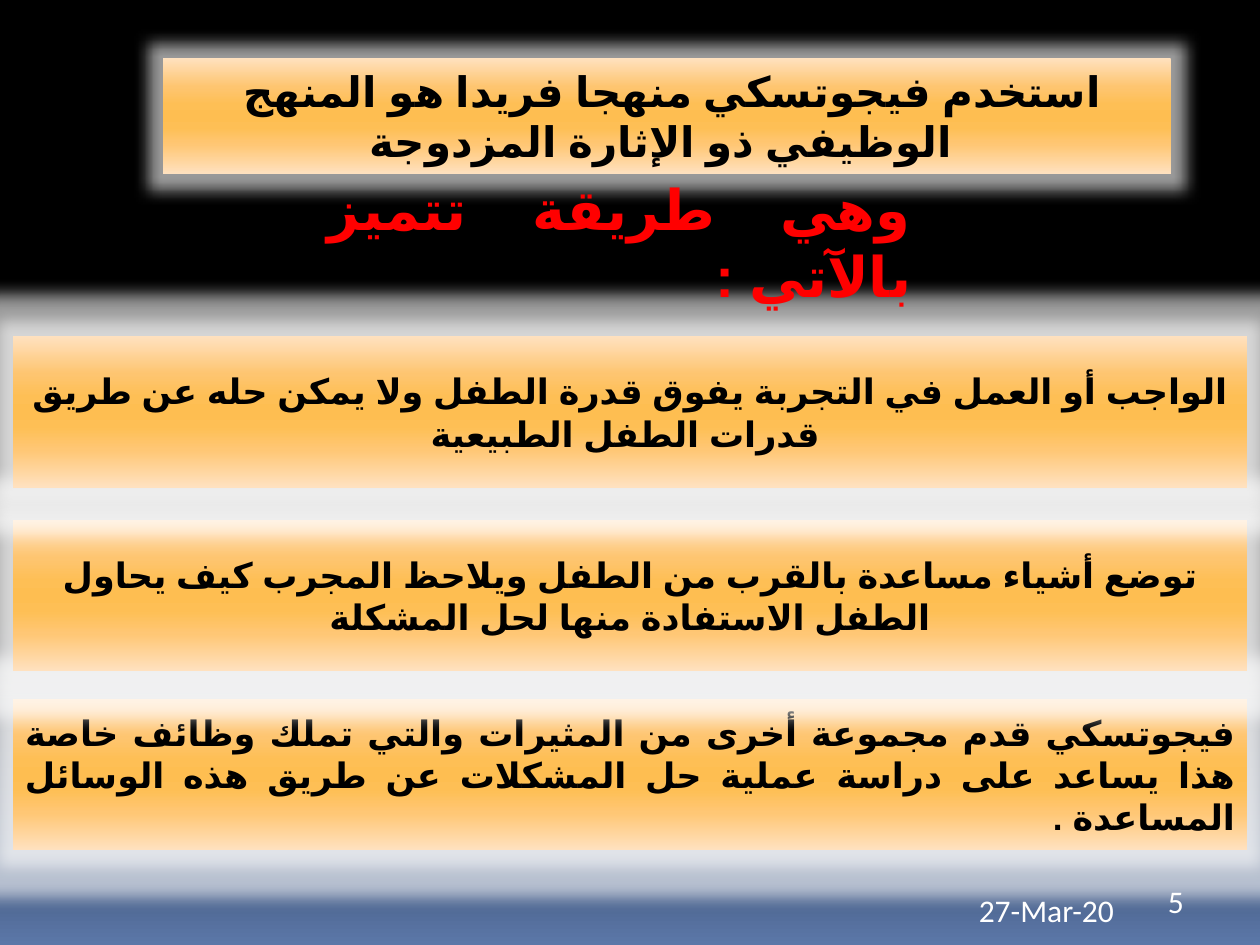
"""Build the slide on the double stimulation method and its three features."""
import pptx
import pptx.dml.color
import pptx.enum.lang
import pptx.enum.shapes
import pptx.enum.text
import pptx.oxml
import pptx.oxml.ns
import pptx.util
from pptx.util import Inches

ALIGN = pptx.enum.text.PP_ALIGN
ANCHOR = pptx.enum.text.MSO_ANCHOR
LANGUAGE = pptx.enum.lang.MSO_LANGUAGE_ID
THEME = {
    "background": [(0, "000000"), (65, "000000"), (100, "5B77A8")],
    "panel": [(0, "FFE1BF"), (25, "FEC570"), (40, "FEBF55"), (50, "FEBE51"),
              (60, "FEBF55"), (75, "FFC775"), (100, "FFE1BF")],
    "glow": "FFFFFF",
    "title": {"name": "Arial", "size": 24, "bold": True, "color": "000000",
              "language": LANGUAGE.ARABIC_EGYPT},
    "heading": {"name": "Arial", "size": 32, "bold": True, "color": "FF0000",
                "language": LANGUAGE.ARABIC_EGYPT},
    "feature": {"name": "Arial", "size": 20, "bold": True, "color": "000000",
                "language": LANGUAGE.ARABIC_EGYPT},
    "footer": {"name": "Calibri", "size": 18, "bold": False, "color": "FFFFFF",
               "language": LANGUAGE.ENGLISH_US},
}
NAMESPACE = pptx.oxml.ns.nsdecls("a")


def paint_gradient(fill, element, stops):
    fill.gradient()
    fill.gradient_angle = 270
    stop_list = element.find(".//" + pptx.oxml.ns.qn("a:gsLst"))
    for old_stop in list(stop_list):
        stop_list.remove(old_stop)
    for position, color in stops:
        stop_list.append(pptx.oxml.parse_xml(
            f'<a:gs {NAMESPACE} pos="{position * 1000}"><a:srgbClr val="{color}"/></a:gs>'))


def write_text(shape, text, style, alignment, anchor=ANCHOR.MIDDLE):
    frame = shape.text_frame
    frame_format = {"word_wrap": True, "vertical_anchor": anchor,
                    "auto_size": pptx.enum.text.MSO_AUTO_SIZE.NONE}
    for name, value in frame_format.items():
        setattr(frame, name, value)
    paragraph = frame.paragraphs[0]
    paragraph.alignment = alignment
    if alignment == ALIGN.JUSTIFY:
        paragraph._p.get_or_add_pPr().set("rtl", "1")
    run = paragraph.add_run()
    run.text = text
    font_format = {"name": style["name"], "bold": style["bold"],
                   "size": pptx.util.Pt(style["size"]), "language_id": style["language"]}
    for name, value in font_format.items():
        setattr(run.font, name, value)
    run.font.color.rgb = pptx.dml.color.RGBColor.from_string(style["color"])
    run._r.get_or_add_rPr().append(pptx.oxml.parse_xml(
        f'<a:cs {NAMESPACE} typeface="{style["name"]}"/>'))


presentation = pptx.Presentation()
presentation.slide_width = Inches(10)
presentation.slide_height = Inches(7.5)
slide = presentation.slides.add_slide(presentation.slide_layouts[5])
paint_gradient(slide.background.fill, slide.element, THEME["background"])

footers = [("27-Mar-20", 7.67, 7.02, 2.33), ("5", 9.17, 6.95, 0.83)]
for text, left, top, width in footers:
    footer = slide.shapes.add_textbox(Inches(left), Inches(top), Inches(width), Inches(0.4))
    write_text(footer, text, THEME["footer"], ALIGN.LEFT, ANCHOR.TOP)

features = [
    (5.55, ALIGN.JUSTIFY, "فيجوتسكي قدم مجموعة أخرى من المثيرات والتي تملك وظائف خاصة هذا يساعد "
     "على دراسة عملية حل المشكلات عن طريق هذه الوسائل المساعدة ."),
    (4.13, ALIGN.CENTER, "توضع أشياء مساعدة بالقرب من الطفل ويلاحظ المجرب كيف يحاول الطفل "
     "الاستفادة منها لحل المشكلة"),
    (2.67, ALIGN.CENTER, "الواجب أو العمل في التجربة يفوق قدرة الطفل ولا يمكن حله عن طريق "
     "قدرات الطفل الطبيعية "),
]
panels = []
for top, alignment, text in features:
    panel = slide.shapes.add_shape(pptx.enum.shapes.MSO_SHAPE.RECTANGLE,
                                   Inches(0.1), Inches(top), Inches(9.8), Inches(1.2))
    panel.element.find(".//" + pptx.oxml.ns.qn("a:effectRef")).set("idx", "0")
    write_text(panel, text, THEME["feature"], alignment)
    panels.append(panel)

title = slide.shapes.title
title_place = {"left": 1.29, "top": 0.46, "width": 8, "height": 0.92}
for name, value in title_place.items():
    setattr(title, name, Inches(value))
write_text(title, " استخدم فيجوتسكي منهجا فريدا هو المنهج الوظيفي ذو الإثارة المزدوجة ",
           THEME["title"], ALIGN.CENTER)
panels.append(title)

for panel in panels:
    paint_gradient(panel.fill, panel.element, THEME["panel"])
    panel.line.fill.background()
    panel.element.spPr.append(pptx.oxml.parse_xml(
        f'<a:effectLst {NAMESPACE}><a:glow rad="{pptx.util.Pt(18)}">'
        f'<a:srgbClr val="{THEME["glow"]}"><a:alpha val="60000"/></a:srgbClr>'
        '</a:glow></a:effectLst>'))

heading = slide.shapes.add_textbox(Inches(2.5), Inches(1.6), Inches(4.83), Inches(0.63))
write_text(heading, "وهي طريقة تتميز بالآتي :", THEME["heading"], ALIGN.JUSTIFY)

presentation.save("out.pptx")
